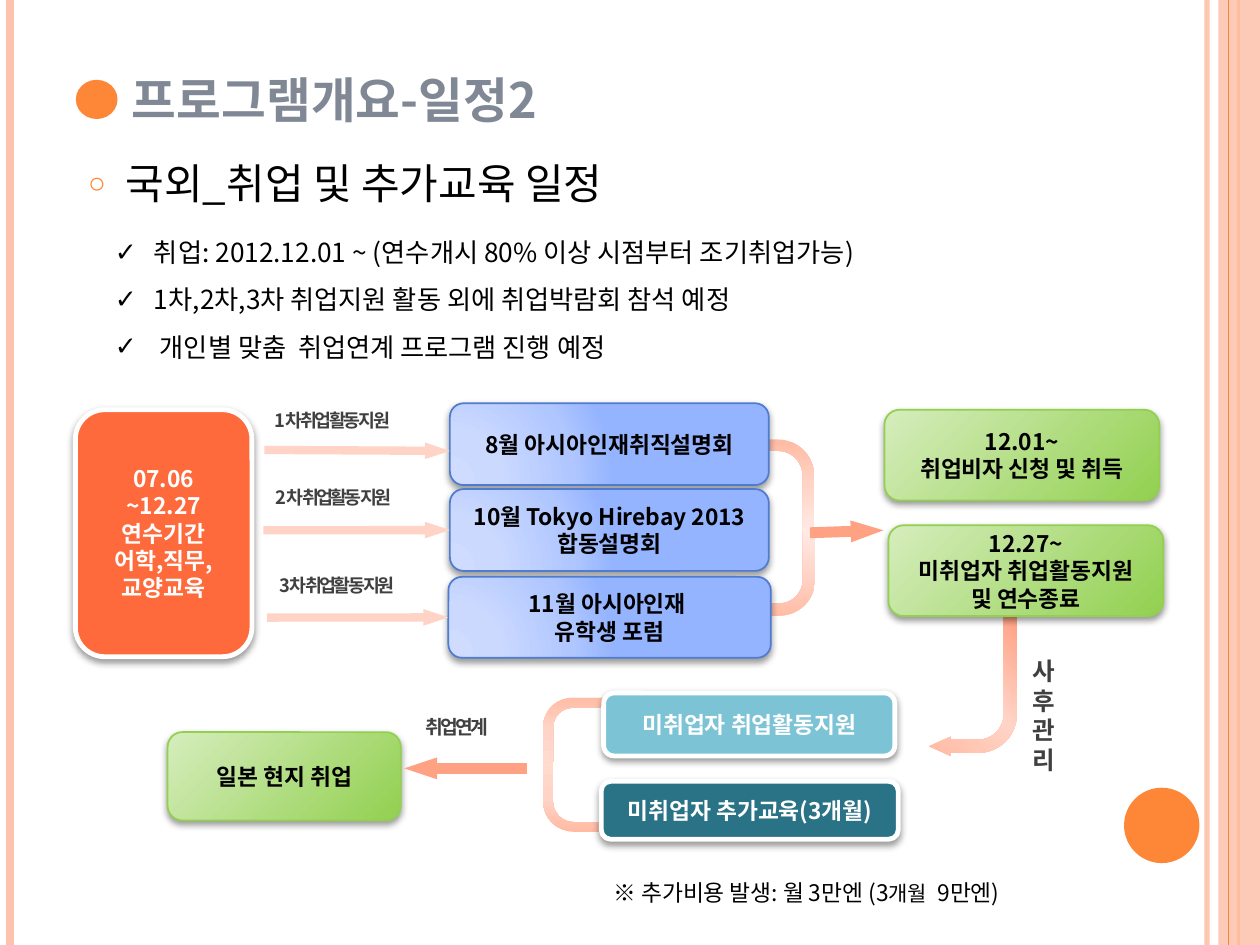
"""Build the overseas employment schedule slide."""
import dataclasses
import typing

import lxml.etree
import pptx
import pptx.dml.color
import pptx.enum.shapes
import pptx.enum.text
import pptx.oxml.ns
import pptx.util

Cm = pptx.util.Cm
Pt = pptx.util.Pt
qn = pptx.oxml.ns.qn
Kind = pptx.enum.shapes.MSO_SHAPE
Align = pptx.enum.text.PP_ALIGN
Anchor = pptx.enum.text.MSO_ANCHOR
Area = tuple[float, float, float, float]
Point = tuple[float, float]


class Grad(typing.NamedTuple):
    stops: tuple[tuple[int, str], ...]
    angle: int = 0
    focus: tuple[int, ...] = ()


def fade(end: str) -> tuple[tuple[int, str], ...]:
    return (0, "FFBBA3"), (50, "FFD4C7"), (100, end)


@dataclasses.dataclass(frozen=True)
class Theme:
    font: str = "Noto Sans CJK KR"
    ink: str = "000000"
    white: str = "FFFFFF"
    gray: str = "404040"
    head: str = "818895"
    orange: str = "FE8637"
    peach: str = "FEC3AE"
    pale: str = "FFD4C7"
    coral: str = "FFA183"
    red: str = "FE6A3C"
    aqua: str = "7CC3D6"
    teal: str = "2A7286"
    navy: str = "4F7CCF"
    leaf: str = "92D050"
    blue: Grad = Grad(((0, "CFDCFF"), (30, "CBD9FF"), (75, "AFC6FF"), (100, "95B4FF")),
                      focus=(5, 100, 120, 10))
    green: Grad = Grad(((0, "92D050"), (100, "D6EDBD")), focus=(100, 100, 0, 0))
    left: Grad = Grad(fade("FFDACD"), 90)
    right: Grad = Grad(fade("FFEAE4"), 90)
    turn: Grad = Grad(fade("FEA082"), 135)
    title: float = 27.8
    lead: float = 24
    item: float = 15
    side: float = 14
    box: float = 13
    unit: float = 12
    link: float = 11
    label: float = 10.5


T = Theme()


@dataclasses.dataclass(frozen=True)
class Box:
    area: Area
    lines: tuple[str, ...]
    fill: str | Grad
    edge: str = T.white
    width: float = 2.75
    ink: str = T.white
    pad: float = 0.25


@dataclasses.dataclass(frozen=True)
class Bend:
    area: Area
    fill: Grad
    turn: int = 0
    flip: bool = False
    thin: bool = False


@dataclasses.dataclass(frozen=True)
class Arrow:
    start: Point
    end: Point
    color: str = T.pale
    width: float = 4.75
    goal: int | None = None


@dataclasses.dataclass(frozen=True)
class Note:
    area: Area
    lines: tuple[str, ...]
    size: float = T.label


def rgb(code: str) -> pptx.dml.color.RGBColor:
    return pptx.dml.color.RGBColor.from_string(code)


def put(item: typing.Any, **form: typing.Any) -> None:
    for name, value in form.items():
        setattr(item, name, value)


def add(node: typing.Any, tag: str, **form: typing.Any) -> typing.Any:
    return lxml.etree.SubElement(node, qn(f"a:{tag}"), {k: str(v) for k, v in form.items()})


def veil(fill: typing.Any, node: typing.Any, color: str, alpha: int) -> None:
    fill.solid()
    fill.fore_color.rgb = rgb(color)
    if alpha < 100:
        add(next(node.iter(qn("a:srgbClr"))), "alpha", val=alpha * 1000)


def paint(shape: typing.Any, fill: str | Grad, alpha: int = 100) -> None:
    spot = shape._element.spPr
    if isinstance(fill, str):
        veil(shape.fill, spot, fill, alpha)
        return
    shape.fill.gradient()
    node = spot.find(qn("a:gradFill"))
    node.clear()
    node.set("rotWithShape", "1")
    stops = add(node, "gsLst")
    for place, color in fill.stops:
        add(add(stops, "gs", pos=place * 1000), "srgbClr", val=color)
    if fill.focus:
        sides = {k: v * 1000 for k, v in zip("ltrb", fill.focus)}
        add(add(node, "path", path="circle"), "fillToRect", **sides)
    else:
        add(node, "lin", ang=fill.angle * 60000, scaled=0)


def shade(shape: typing.Any) -> None:
    glow = add(shape._element.spPr.find(qn("a:effectLst")), "outerShdw", blurRad=Pt(4),
               dist=Pt(2), dir=5400000, algn="t", rotWithShape=0)
    add(add(glow, "srgbClr", val=T.ink), "alpha", val=40000)


def draw(slide: typing.Any, kind: typing.Any, area: Area, fill: str | Grad,
         alpha: int = 100) -> typing.Any:
    shape = slide.shapes.add_shape(kind, *map(Cm, area))
    shape.shadow.inherit = False
    shape.line.fill.background()
    paint(shape, fill, alpha)
    return shape


def write(frame: typing.Any, lines: typing.Sequence, size: float, ink: str = T.ink,
          bold: bool = False, gap: int = 0, **form: typing.Any) -> None:
    frame.word_wrap = True
    for i, line in enumerate(lines):
        para = frame.add_paragraph() if i else frame.paragraphs[0]
        put(para, **form)
        for text, high in [(line, size)] if isinstance(line, str) else line:
            run = para.add_run()
            run.text = text
            put(run.font, name=T.font, size=Pt(high), bold=bold)
            run.font.color.rgb = rgb(ink)
            mark = run._r.get_or_add_rPr()
            add(mark, "ea", typeface=T.font)
            if gap:
                mark.set("spc", str(gap))


def hold(shape: typing.Any, area: Area) -> typing.Any:
    put(shape, **dict(zip(("left", "top", "width", "height"), map(Cm, area))))
    shape.text_frame.auto_size = pptx.enum.text.MSO_AUTO_SIZE.NONE
    return shape.text_frame


def mark(frame: typing.Any, char: str, dent: float, color: str, size: int) -> None:
    for para in frame.paragraphs:
        node = para._p.get_or_add_pPr()
        node.set("marL", str(Cm(dent)))
        node.set("indent", str(-Cm(dent)))
        add(add(node, "buClr"), "srgbClr", val=color)
        add(node, "buSzPct", val=size * 1000)
        add(node, "buChar", char=char)


def link(slide: typing.Any, start: Point, end: Point, color: str, width: float,
         alpha: int = 100) -> typing.Any:
    line = slide.shapes.add_connector(pptx.enum.shapes.MSO_CONNECTOR.STRAIGHT,
                                      *map(Cm, start + end))
    line.line.width = Pt(width)
    veil(line.line.fill, line._element.spPr, color, alpha)
    add(line._element.spPr, "effectLst")
    return line


def point(slide: typing.Any, arrow: Arrow, boxes: list) -> None:
    line = link(slide, arrow.start, arrow.end, arrow.color, arrow.width)
    add(line._element.spPr.find(qn("a:ln")), "tailEnd", type="triangle", w="sm", len="med")
    if arrow.goal is not None:
        line.end_connect(boxes[arrow.goal], 1)


def bend(slide: typing.Any, item: Bend) -> None:
    shape = draw(slide, Kind.BENT_ARROW, item.area, item.fill)
    shape.rotation = item.turn
    for i, value in enumerate((0.25, 0.07, 0.25, 0.44) if item.thin else (0.15, 0.11, 0.25, 0.44)):
        shape.adjustments[i] = value
    if item.flip:
        shape._element.spPr.xfrm.set("flipV", "1")


def card(slide: typing.Any, box: Box) -> typing.Any:
    shape = draw(slide, Kind.ROUNDED_RECTANGLE, box.area, box.fill)
    shape.line.color.rgb = rgb(box.edge)
    shape.line.width = Pt(box.width)
    shade(shape)
    put(shape.text_frame, vertical_anchor=Anchor.MIDDLE,
        margin_left=Cm(box.pad), margin_right=Cm(box.pad))
    write(shape.text_frame, box.lines, T.box, box.ink, True, alignment=Align.CENTER)
    return shape


def fair(area: Area, *lines: str) -> Box:
    return Box(area, lines, T.blue, T.navy, 1, T.ink)


def step(area: Area, *lines: str) -> Box:
    return Box(area, lines, T.green, T.leaf, 1, T.ink, 0.4)


BOXES = (
    fair((9.07, 8.13, 6.43, 1.65), "8월 아시아인재취직설명회"),
    fair((9.07, 9.86, 6.43, 1.65), "10월 Tokyo Hirebay 2013합동설명회"),
    fair((9.04, 11.63, 6.5, 1.63), "11월 아시아인재 ", "유학생 포럼"),
    Box((1.52, 8.26, 3.56, 4.98), ("07.06", "~12.27", "연수기간", "어학,직무,교양교육"), T.red),
    Box((12.17, 13.97, 5.87, 1.27), ("미취업자 취업활동지원",), T.aqua),
    Box((12.12, 15.75, 5.99, 1.17), ("미취업자 추가교육(3개월)",), T.teal),
    step((17.83, 8.26, 5.54, 1.83), "12.01~", "취업비자 신청 및 취득"),
    step((17.91, 10.59, 5.54, 1.83), "12.27~", "미취업자 취업활동지원 및 연수종료"),
    step((3.38, 14.76, 4.7, 1.78), "일본 현지 취업"),
)
BENDS = (
    Bend((10.95, 15.37, 1.65, 1.4), T.left, flip=True, thin=True),
    Bend((10.95, 14.02, 1.65, 1.35), T.left),
    Bend((18.72, 12.42, 1.78, 2.82), T.turn, 180),
    Bend((14.78, 10.69, 1.65, 1.78), T.right, 180),
    Bend((14.76, 8.86, 1.65, 1.85), T.right, 180, True, True),
)
ARROWS = (
    Arrow((5.33, 9.07), (9.07, 9.09)),
    Arrow((5.31, 10.69), (9.07, 10.69), goal=1),
    Arrow((5.38, 12.45), (9.04, 12.45), goal=2),
    Arrow((16.33, 10.74), (17.81, 10.69), T.coral, 6.25),
    Arrow((10.62, 15.49), (8.15, 15.49), T.coral, 6.25),
)
NOTES = (
    *(Note((x, y, 3.73, 0.71), (f"{i}차 취업활동 지원",))
      for i, (x, y) in enumerate(((5.28, 8.13), (5.31, 9.68), (5.38, 11.46)), 1)),
    Note((20.57, 13.11, 1.63, 2.64), tuple("사후관리"), T.side),
    Note((8.33, 14.3, 2.13, 0.74), ("취업연계",), T.link),
)
RAILS = ((24.33, T.peach, 3, 93), (0.2, T.peach, 4.5, 100),
         (24.97, T.orange, 1.5, 100), (24.77, T.orange, 0.75, 100))


def main() -> None:
    deck = pptx.Presentation()
    put(deck, slide_width=Cm(25.4), slide_height=Cm(19.05))
    slide = deck.slides.add_slide(deck.slide_layouts[3])
    title, lead, items = slide.placeholders
    for i, (x, color, width, alpha) in enumerate(RAILS):
        if i == 3:
            draw(slide, Kind.RECTANGLE, (24.56, 0, 0.84, 19.05), T.peach, 87)
        link(slide, (x, 0), (x, 19.05), color, width, alpha)
    for area in ((22.66, 15.88, 1.52, 1.52), (1.53, 1.61, 0.84, 0.79)):
        draw(slide, Kind.OVAL, area, T.orange)

    frame = hold(title, (1.52, 0.94, 10.92, 1.78))
    put(frame, vertical_anchor=Anchor.BOTTOM, margin_left=Cm(1.14))
    write(frame, ["프로그램개요-일정2"], T.title, T.head, True, alignment=Align.LEFT)
    frame = hold(lead, (1.52, 3.05, 20.52, 2.84))
    write(frame, ["국외_취업 및 추가교육 일정"], T.lead, space_before=Pt(6))
    mark(frame, "○", 0.76, T.orange, 70)
    frame = hold(items, (2.06, 4.32, 17.63, 3.15))
    write(frame, ["취업: 2012.12.01 ~ (연수개시 80% 이상 시점부터 조기취업가능)",
                  "1차,2차,3차 취업지원 활동 외에 취업박람회 참석 예정",
                  " 개인별 맞춤  취업연계 프로그램 진행 예정"],
          T.item, space_before=Pt(0), line_spacing=1.5)
    mark(frame, "✓", 0.79, T.ink, 100)

    for item in BENDS:
        bend(slide, item)
    boxes = [card(slide, box) for box in BOXES]
    for arrow in ARROWS:
        point(slide, arrow, boxes)
    for note in NOTES:
        frame = slide.shapes.add_textbox(*map(Cm, note.area)).text_frame
        write(frame, note.lines, note.size, T.gray, True, -150, alignment=Align.JUSTIFY)
    frame = slide.shapes.add_textbox(*map(Cm, (12.12, 17.32, 11, 1.09))).text_frame
    cost = (("※ 추가비용 발생: 월 3만엔 (3", T.box), ("개월", T.unit), ("  9만엔)", T.box))
    write(frame, [cost], T.box, line_spacing=1.5)
    deck.save("out.pptx")


if __name__ == "__main__":
    main()
